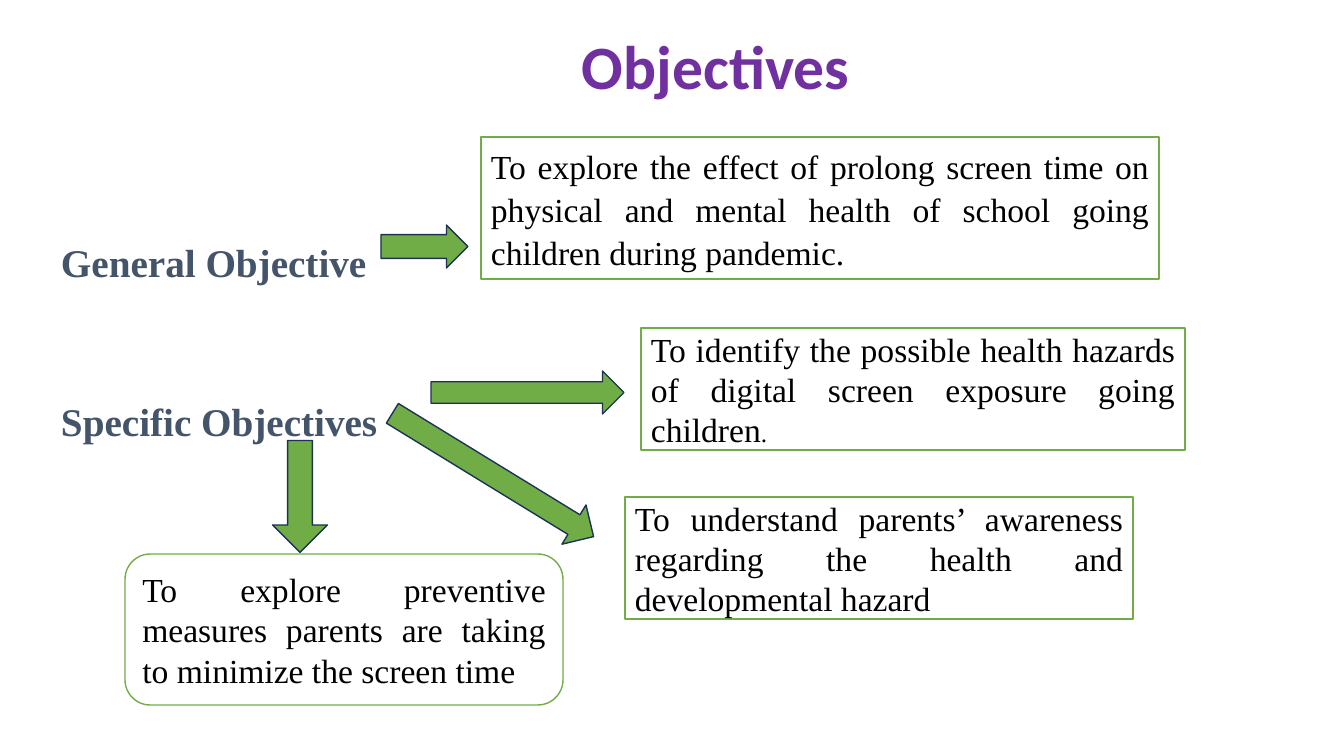
"""Build the Objectives slide with its labels, arrows and objective boxes."""
from dataclasses import dataclass

from pptx import Presentation
from pptx.dml.color import RGBColor
from pptx.enum.shapes import MSO_SHAPE
from pptx.enum.text import MSO_ANCHOR, MSO_AUTO_SIZE, PP_ALIGN
from pptx.util import Pt

RECTANGLE = MSO_SHAPE.RECTANGLE
ROUNDED = MSO_SHAPE.ROUNDED_RECTANGLE
RIGHT_ARROW = MSO_SHAPE.RIGHT_ARROW
MIDDLE = MSO_ANCHOR.MIDDLE
JUSTIFY = PP_ALIGN.JUSTIFY
LEFT = PP_ALIGN.LEFT
NO_AUTOFIT = MSO_AUTO_SIZE.NONE

EMU_PER_INCH = 914400
PX_PER_INCH = 100.8
SERIF = "Times New Roman"
SANS = "Calibri"
GREEN = "70AD47"
NAVY = "1E3256"
WHITE = "FFFFFF"
BLACK = "000000"
SLATE = "44546A"
PURPLE = "7030A0"


@dataclass
class Box:
    """A place on the slide in px."""
    left: int
    top: int
    width: int
    height: int


@dataclass
class Label:
    """A heading for one kind of objective."""
    box: Box
    text: str


@dataclass
class Objective:
    """A bordered box with one objective."""
    box: Box
    runs: list[tuple[str, int]]
    outline: MSO_SHAPE = RECTANGLE
    line_spacing: float = 1.0
    space_after: int = 0


@dataclass
class Arrow:
    """A block arrow, turned by an angle in degrees."""
    box: Box
    angle: float = 0
    shaft: float = 0.5


LABELS = [
    Label(Box(61, 239, 330, 45), "General Objective"),
    Label(Box(61, 398, 330, 45), "Specific Objectives"),
]
OBJECTIVES = [
    Objective(Box(481, 137, 678, 142),
              [("To explore the effect of prolong screen time on physical and mental "
                "health of school going children during pandemic.", 24)],
              line_spacing=1.07, space_after=8),
    Objective(Box(641, 328, 544, 122),
              [("To identify the possible health hazards of digital screen exposure "
                "going children", 24), (".", 18)]),
    Objective(Box(625, 497, 508, 122),
              [("To understand parents’ awareness regarding the health and "
                "developmental hazard", 24)]),
    Objective(Box(125, 554, 438, 151),
              [("To explore preventive measures parents are taking to minimize the "
                "screen time", 24)], outline=ROUNDED),
]
ARROWS = [
    Arrow(Box(431, 371, 193, 43)),
    Arrow(Box(375, 452, 236, 46), angle=31.5),
    Arrow(Box(244, 469, 112, 55), angle=90, shaft=0.45),
    Arrow(Box(381, 225, 87, 43), shaft=0.55),
]


def px(length: int) -> int:
    """Turn px into EMU."""
    return round(length * EMU_PER_INCH / PX_PER_INCH)


def place(box: Box) -> tuple[int, int, int, int]:
    """Give left, top, width and height in EMU."""
    return px(box.left), px(box.top), px(box.width), px(box.height)


def rgb(colour: str) -> RGBColor:
    """Turn a hex string into a colour."""
    return RGBColor.from_string(colour)


def style_run(run, font: str, size: int, colour: str, bold: bool = False) -> None:
    """Set the font of a run."""
    run.font.name = font
    run.font.size = Pt(size)
    run.font.bold = bold
    run.font.color.rgb = rgb(colour)


def add_outlined(slide, kind: MSO_SHAPE, box: Box, fill: str, line: str):
    """Add a flat preset shape with a thin outline."""
    shape = slide.shapes.add_shape(kind, *place(box))
    shape.shadow.inherit = False
    shape.fill.solid()
    shape.fill.fore_color.rgb = rgb(fill)
    shape.line.color.rgb = rgb(line)
    shape.line.width = Pt(1)
    return shape


def set_title(slide, text: str, box: Box, indent: int) -> None:
    """Place and format the slide title."""
    title = slide.shapes.title
    title.left, title.top, title.width, title.height = place(box)
    frame = title.text_frame
    frame.text = text
    frame.auto_size = NO_AUTOFIT
    frame.vertical_anchor = MIDDLE
    frame.margin_left = px(indent)
    paragraph = frame.paragraphs[0]
    paragraph.alignment = LEFT
    paragraph.line_spacing = 0.9
    style_run(paragraph.runs[0], SANS, 44, PURPLE, bold=True)


def add_label(slide, label: Label) -> None:
    """Add a heading without inner margins."""
    frame = slide.shapes.add_textbox(*place(label.box)).text_frame
    frame.word_wrap = True
    frame.vertical_anchor = MIDDLE
    frame.margin_left = frame.margin_right = 0
    frame.margin_top = frame.margin_bottom = 0
    frame.text = label.text
    frame.paragraphs[0].alignment = JUSTIFY
    style_run(frame.paragraphs[0].runs[0], SERIF, 28, SLATE, bold=True)


def add_objective(slide, objective: Objective) -> None:
    """Add a bordered box with justified text."""
    shape = add_outlined(slide, objective.outline, objective.box, WHITE, GREEN)
    frame = shape.text_frame
    frame.word_wrap = True
    frame.vertical_anchor = MIDDLE
    paragraph = frame.paragraphs[0]
    paragraph.alignment = JUSTIFY
    paragraph.line_spacing = objective.line_spacing
    paragraph.space_after = Pt(objective.space_after)
    for text, size in objective.runs:
        run = paragraph.add_run()
        run.text = text
        style_run(run, SERIF, size, BLACK)


def add_arrow(slide, arrow: Arrow) -> None:
    """Add a green block arrow."""
    shape = add_outlined(slide, RIGHT_ARROW, arrow.box, GREEN, NAVY)
    shape.adjustments[0] = arrow.shaft
    shape.rotation = arrow.angle


def main() -> None:
    """Build and save the slide."""
    presentation = Presentation()
    presentation.slide_width = px(1344)
    presentation.slide_height = px(756)
    slide = presentation.slides.add_slide(presentation.slide_layouts[5])
    set_title(slide, "Objectives", Box(143, 16, 990, 107), indent=439)
    for label in LABELS:
        add_label(slide, label)
    for objective in OBJECTIVES:
        add_objective(slide, objective)
    for arrow in ARROWS:
        add_arrow(slide, arrow)
    presentation.save("out.pptx")


if __name__ == "__main__":
    main()
